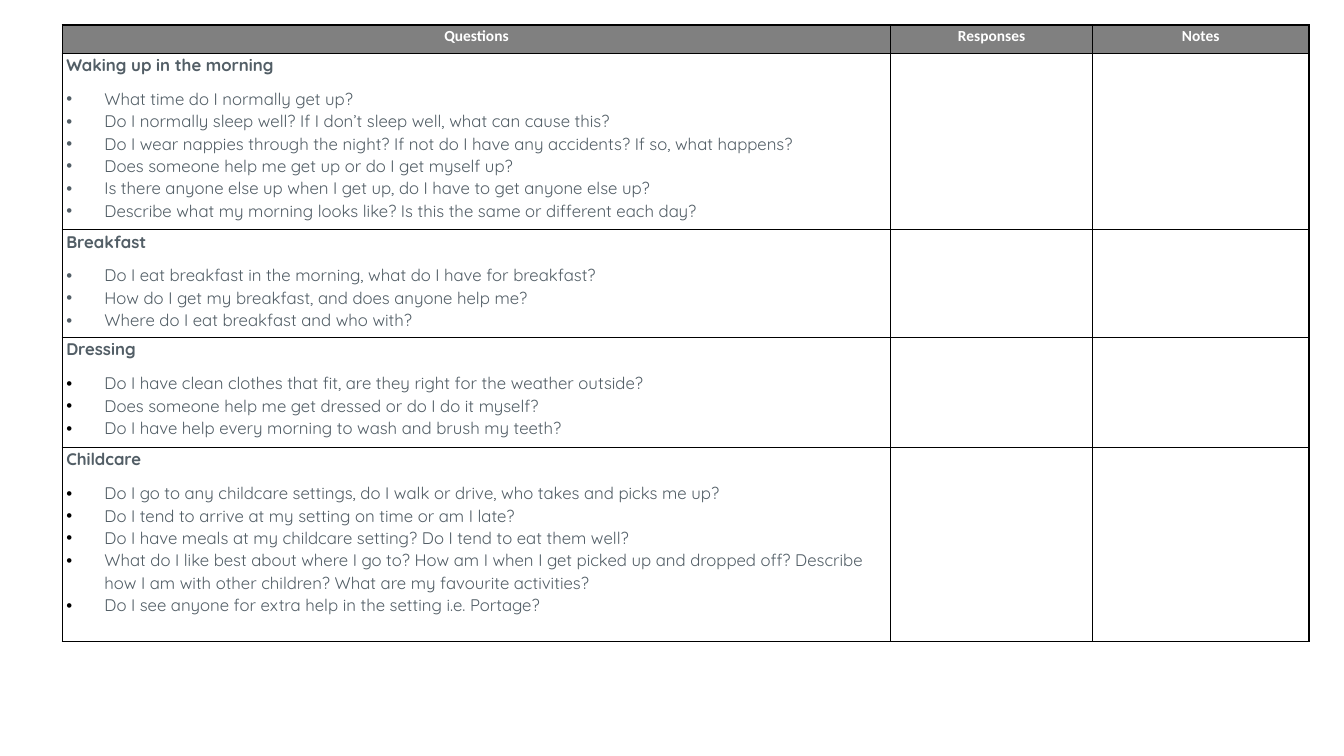
from lxml.etree import SubElement
from pptx import Presentation
from pptx.dml.color import RGBColor
from pptx.enum.text import PP_ALIGN as Align
from pptx.oxml.ns import qn
from pptx.util import Cm, Pt

HEADERS = ["Questions", "Responses", "Notes"]
SECTIONS = [
    ("Waking up in the morning", [
        "What time do I normally get up?",
        "Do I normally sleep well? If I don’t sleep well, what can cause this?",
        "Do I wear nappies through the night? If not do I have any accidents? If so, what happens?",
        "Does someone help me get up or do I get myself up?",
        "Is there anyone else up when I get up, do I have to get anyone else up?",
        "Describe what my morning looks like? Is this the same or different each day?",
    ]),
    ("Breakfast", [
        "Do I eat breakfast in the morning, what do I have for breakfast?",
        "How do I get my breakfast, and does anyone help me?",
        "Where do I eat breakfast and who with?",
    ]),
    ("Dressing", [
        "Do I have clean clothes that fit, are they right for the weather outside?",
        "Does someone help me get dressed or do I do it myself?",
        "Do I have help every morning to wash and brush my teeth?",
    ]),
    ("Childcare", [
        "Do I go to any childcare settings, do I walk or drive, who takes and picks me up?",
        "Do I tend to arrive at my setting on time or am I late?",
        "Do I have meals at my childcare setting? Do I tend to eat them well?",
        "What do I like best about where I go to? How am I when I get picked up and dropped off? "
        "Describe how I am with other children? What are my favourite activities?",
        "Do I see anyone for extra help in the setting i.e. Portage?",
    ]),
]
BLACK_BULLETS = {"Dressing", "Childcare"}

COL_WIDTHS = [20.88, 5.08, 5.46]
ROW_HEIGHTS = [0.71, 4.45, 2.72, 2.77, 4.88]

WHITE = RGBColor(0xFF, 0xFF, 0xFF)
BLACK = RGBColor(0x00, 0x00, 0x00)
GRAY = RGBColor(0x80, 0x80, 0x80)
SLATE = RGBColor(0x52, 0x5E, 0x66)


def add_color(parent, color):
    SubElement(parent, qn("a:srgbClr"), val=str(color))


def write(p, text, size=12, font="Quicksand", color=SLATE, bold=False,
          align=Align.LEFT, after=0, bullet=None):
    if bullet is not None:
        pPr = p._p.get_or_add_pPr()
        pPr.set("marL", str(Cm(0.96)))
        pPr.set("indent", str(-Cm(0.96)))
        add_color(SubElement(pPr, qn("a:buClr")), bullet)
        SubElement(pPr, qn("a:buFont"), typeface="Arial")
        SubElement(pPr, qn("a:buChar"), char="•")
    p.alignment = align
    p.line_spacing = 1.07
    p.space_before = Pt(0)
    p.space_after = Pt(after)
    r = p.add_run()
    r.text = text
    r.font.size = Pt(size)
    r.font.name = font
    r.font.bold = bold
    r.font.color.rgb = color


def format_cell(cell, fill):
    cell.margin_left = cell.margin_right = Cm(0.1)
    cell.margin_top = cell.margin_bottom = 0
    tcPr = cell._tc.get_or_add_tcPr()
    for side in ("lnL", "lnR", "lnT", "lnB"):
        ln = SubElement(tcPr, qn(f"a:{side}"), w=str(Pt(1)))
        add_color(SubElement(ln, qn("a:solidFill")), BLACK)
    cell.fill.solid()
    cell.fill.fore_color.rgb = fill


prs = Presentation()
prs.slide_width, prs.slide_height = Cm(33.87), Cm(19.05)
s = prs.slides.add_slide(prs.slide_layouts[6])

table = s.shapes.add_table(
    len(ROW_HEIGHTS), len(COL_WIDTHS), Cm(1.57), Cm(0.63),
    Cm(sum(COL_WIDTHS)), Cm(sum(ROW_HEIGHTS))).table
table.horz_banding = False
for col, width in zip(table.columns, COL_WIDTHS):
    col.width = Cm(width)
for i, (row, height) in enumerate(zip(table.rows, ROW_HEIGHTS)):
    row.height = Cm(height)
    for cell in row.cells:
        format_cell(cell, WHITE if i else GRAY)

for cell, header in zip(table.rows[0].cells, HEADERS):
    write(cell.text_frame.paragraphs[0], header, size=11, font="Calibri",
          color=WHITE, bold=True, align=Align.CENTER, after=8)

for i, (heading, questions) in enumerate(SECTIONS, 1):
    tf = table.cell(i, 0).text_frame
    write(tf.paragraphs[0], heading, bold=True, after=8)
    for question in questions:
        write(tf.add_paragraph(), question,
              after=8 if question == questions[-1] else 0,
              bullet=BLACK if heading in BLACK_BULLETS else SLATE)

prs.save("out.pptx")
